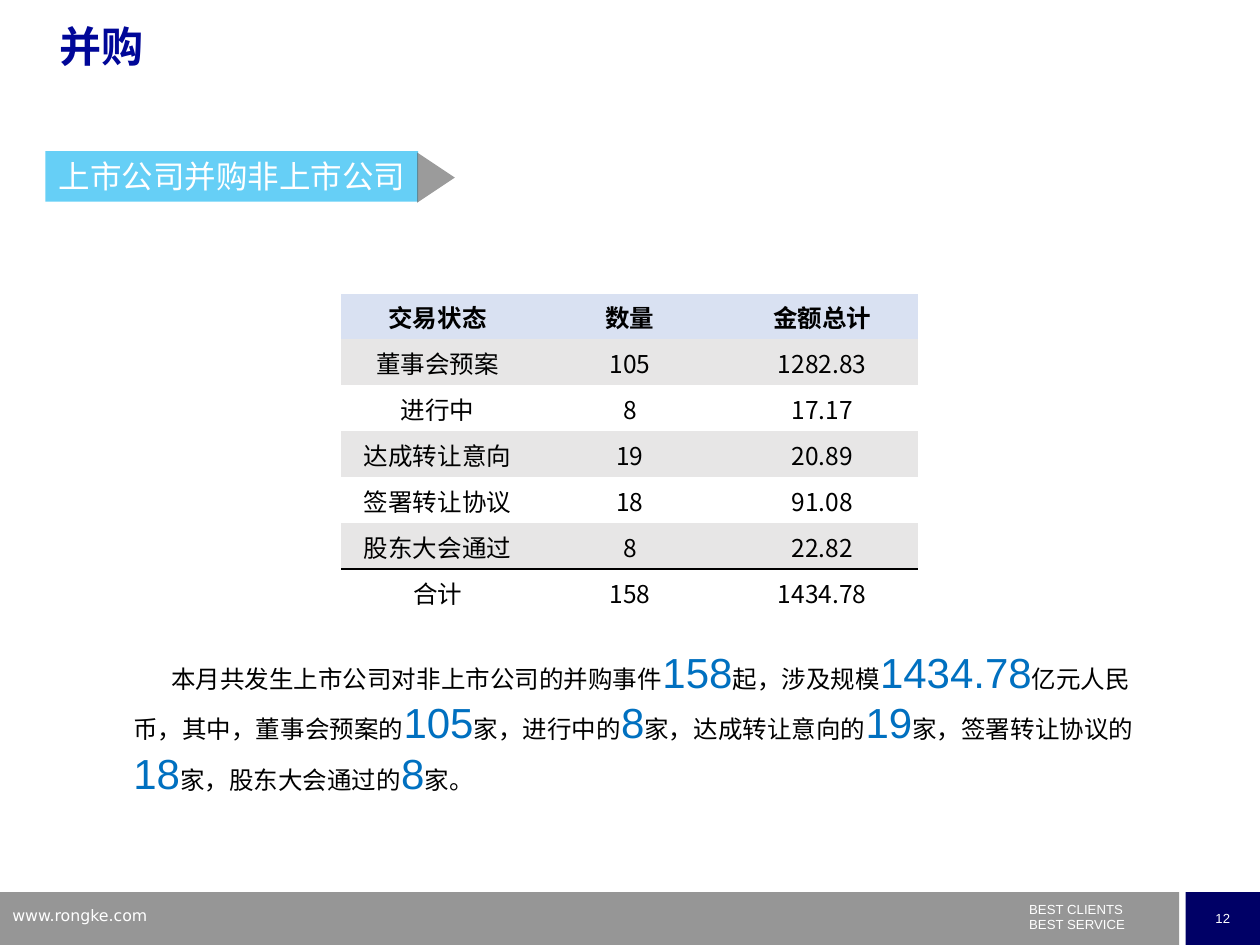
from lxml.etree import SubElement
from pptx import Presentation
from pptx.dml.color import RGBColor
from pptx.enum.shapes import MSO_SHAPE
from pptx.enum.text import MSO_ANCHOR, PP_ALIGN
from pptx.oxml import parse_xml
from pptx.oxml.ns import nsdecls, qn
from pptx.util import Inches, Pt

WHITE = RGBColor(0xFF, 0xFF, 0xFF)
BLACK = RGBColor(0x00, 0x00, 0x00)
FOOTER_GRAY = RGBColor(0x96, 0x96, 0x96)
NAVY = RGBColor(0x00, 0x00, 0x66)
TITLE_BLUE = RGBColor(0x00, 0x07, 0x98)
BANNER_BLUE = RGBColor(0x00, 0xB0, 0xF0)
ARROW_GRAY = RGBColor(0x59, 0x59, 0x59)
NUMBER_BLUE = RGBColor(0x00, 0x70, 0xC0)
HEADER_FILL = RGBColor(0xD9, 0xE1, 0xF2)
BAND_FILL = RGBColor(0xE7, 0xE6, 0xE6)
CHINESE_FONT = "Noto Sans CJK SC"


def set_font(font, size, color, name=CHINESE_FONT, bold=False):
    font.size = Pt(size)
    font.bold = bold
    font.color.rgb = color
    font.name = name
    SubElement(font._element, qn("a:ea"), typeface=CHINESE_FONT)


def add_block(kind, left, top, width, height, color, opacity=100):
    """Add a borderless filled shape."""
    shape = slide.shapes.add_shape(
        kind, Inches(left), Inches(top), Inches(width), Inches(height))
    shape.shadow.inherit = False
    shape.fill.solid()
    shape.fill.fore_color.rgb = color
    shape.line.fill.background()
    if opacity < 100:
        color_element = shape._element.spPr.find(qn("a:solidFill"))[0]
        SubElement(color_element, qn("a:alpha"), val=str(opacity * 1000))
    return shape


presentation = Presentation()
presentation.slide_width = Inches(10)
presentation.slide_height = Inches(7.5)
slide = presentation.slides.add_slide(presentation.slide_layouts[5])

# Footer
add_block(MSO_SHAPE.RECTANGLE, 0, 7.08, 9.36, 0.42, FOOTER_GRAY)
page_box = add_block(MSO_SHAPE.RECTANGLE, 9.41, 7.08, 0.59, 0.42, NAVY)
page_box.text_frame.text = "12"
page_box.text_frame.vertical_anchor = MSO_ANCHOR.MIDDLE
page_number = page_box.text_frame.paragraphs[0]
page_number.alignment = PP_ALIGN.CENTER
set_font(page_number.font, 7.5, WHITE, "Arial")

for left, width, inset, text, size, font_name in (
    (8.07, 1.5, 0.01, "BEST CLIENTS\nBEST SERVICE", 7.5, "Arial"),
    (0, 2.4, 0.05, "www.rongke.com", 9, "DejaVu Sans"),
):
    footer = slide.shapes.add_textbox(
        Inches(left), Inches(7.14), Inches(width), Inches(0.28)).text_frame
    footer.word_wrap = True
    footer.margin_top = Inches(inset)
    footer.text = text
    for paragraph in footer.paragraphs:
        set_font(paragraph.font, size, WHITE, font_name)

# Title
title = slide.shapes.title
title.left, title.top = Inches(0.37), Inches(0.16)
title.width, title.height = Inches(9), Inches(0.7)
title.text_frame.text = "并购"
title.text_frame.vertical_anchor = MSO_ANCHOR.TOP
title_paragraph = title.text_frame.paragraphs[0]
title_paragraph.alignment = PP_ALIGN.LEFT
title_paragraph.line_spacing = 0.9
set_font(title_paragraph.font, 24, TITLE_BLUE, "Arial", bold=True)

# Section banner
banner = add_block(MSO_SHAPE.RECTANGLE, 0.36, 1.2, 2.96, 0.4, BANNER_BLUE, 60)
banner.text_frame.text = "上市公司并购非上市公司"
banner.text_frame.word_wrap = False
banner.text_frame.vertical_anchor = MSO_ANCHOR.MIDDLE
banner_paragraph = banner.text_frame.paragraphs[0]
banner_paragraph.alignment = PP_ALIGN.CENTER
set_font(banner_paragraph.font, 18, WHITE)
arrow = add_block(
    MSO_SHAPE.ISOSCELES_TRIANGLE, 3.26, 1.26, 0.4, 0.3, ARROW_GRAY, 60)
arrow.rotation = 90

# Table
rows = [
    ("交易状态", "数量", "金额总计"),
    ("董事会预案", "105", "1282.83"),
    ("进行中", "8", "17.17"),
    ("达成转让意向", "19", "20.89"),
    ("签署转让协议", "18", "91.08"),
    ("股东大会通过", "8", "22.82"),
    ("合计", "158", "1434.78"),
]
total_row = len(rows) - 1
table = slide.shapes.add_table(
    len(rows), 3, Inches(2.71), Inches(2.33), Inches(4.58), Inches(2.55)).table
table.first_row = table.horz_banding = False
# "No Style, No Grid"
table._tbl.tblPr.find(qn("a:tableStyleId")).text = (
    "{2D5ABB26-0587-4C30-8999-92F81FD0307C}")

for row_index, values in enumerate(rows):
    if row_index == 0:
        fill = HEADER_FILL
    else:
        fill = BAND_FILL if row_index % 2 else WHITE
    for column_index, value in enumerate(values):
        cell = table.cell(row_index, column_index)
        cell.text = value
        cell.vertical_anchor = MSO_ANCHOR.MIDDLE
        cell.margin_left = cell.margin_right = cell.margin_top = Inches(0.01)
        cell.margin_bottom = 0
        cell.fill.solid()
        cell.fill.fore_color.rgb = fill
        paragraph = cell.text_frame.paragraphs[0]
        paragraph.alignment = PP_ALIGN.CENTER
        set_font(paragraph.font, 14, BLACK, bold=row_index == 0)
        if row_index >= total_row - 1:
            side = "lnT" if row_index == total_row else "lnB"
            cell._tc.get_or_add_tcPr().insert(0, parse_xml(
                f'<a:{side} {nsdecls("a")} w="{Pt(1)}"><a:solidFill>'
                f'<a:srgbClr val="{BLACK}"/></a:solidFill></a:{side}>'))

# Summary: words and highlighted numbers alternate
summary_parts = [
    "本月共发生上市公司对非上市公司的并购事件", "158",
    "起，涉及规模", "1434.78",
    "亿元人民币，其中，董事会预案的", "105",
    "家，进行中的", "8",
    "家，达成转让意向的", "19",
    "家，签署转让协议的", "18",
    "家，股东大会通过的", "8",
    "家。",
]
summary = slide.shapes.add_textbox(
    Inches(0.96), Inches(5.08), Inches(8.24), Inches(1.31)).text_frame
summary.word_wrap = True
summary_paragraph = summary.paragraphs[0]
summary_paragraph._p.get_or_add_pPr().set("indent", str(Inches(0.3)))
for index, part in enumerate(summary_parts):
    run = summary_paragraph.add_run()
    run.text = part
    if index % 2:
        set_font(run.font, 24, NUMBER_BLUE, "Arial")
    else:
        set_font(run.font, 14, BLACK)

presentation.save("out.pptx")
